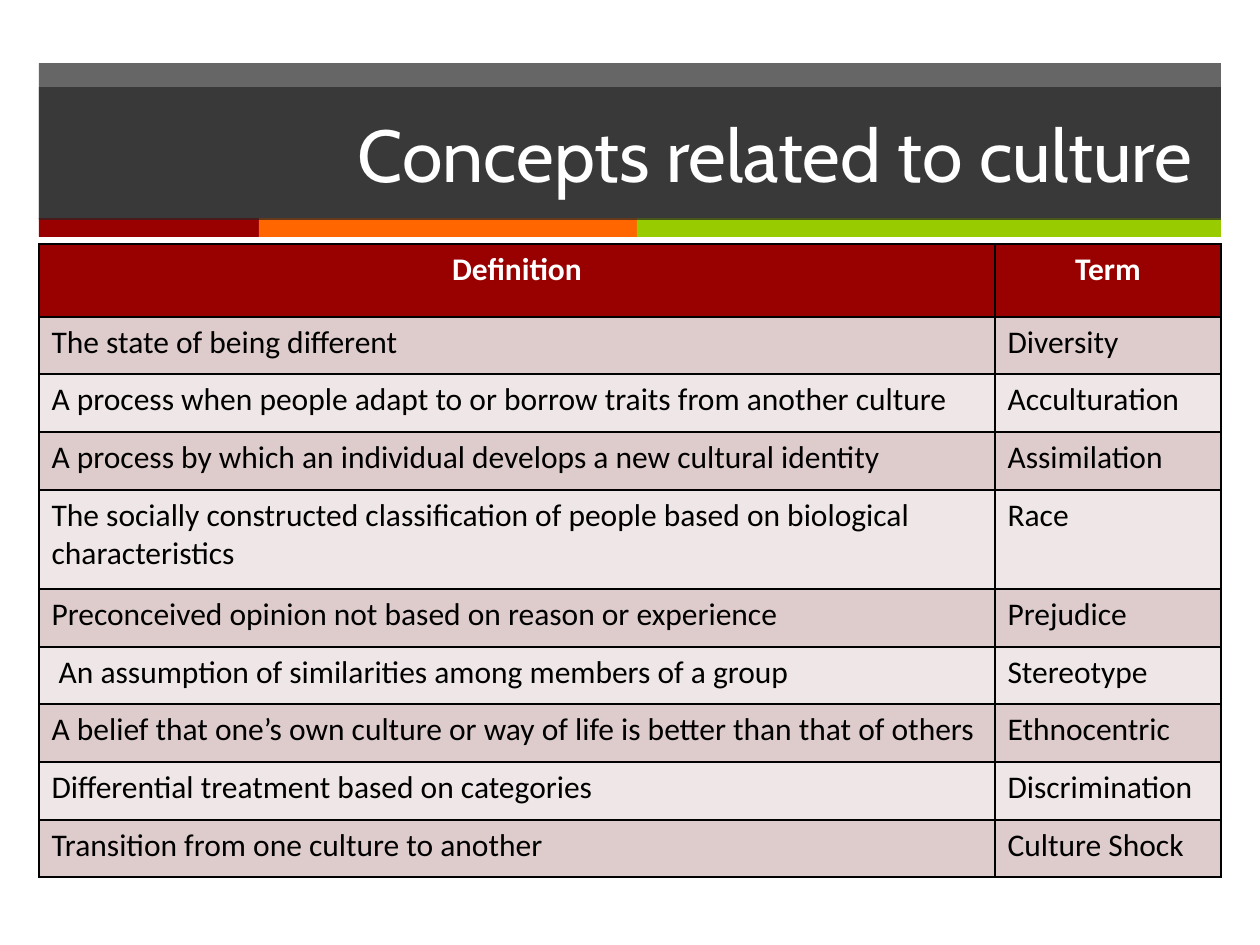
"""Build the slide of concepts related to culture, with their definitions."""
from lxml import etree
from pptx import Presentation
from pptx.dml.color import RGBColor
from pptx.enum.shapes import MSO_SHAPE
from pptx.enum.text import MSO_ANCHOR, PP_ALIGN
from pptx.oxml.ns import qn
from pptx.util import Pt

RECTANGLE = MSO_SHAPE.RECTANGLE
MIDDLE = MSO_ANCHOR.MIDDLE
LEFT, CENTER, RIGHT = PP_ALIGN.LEFT, PP_ALIGN.CENTER, PP_ALIGN.RIGHT

WHITE = RGBColor(0xFF, 0xFF, 0xFF)
BLACK = RGBColor(0x00, 0x00, 0x00)
CHARCOAL = RGBColor(0x26, 0x26, 0x26)
DARK_RED = RGBColor(0x99, 0x00, 0x00)
ORANGE = RGBColor(0xFF, 0x66, 0x00)
LIME = RGBColor(0x99, 0xCC, 0x00)
ROSE = RGBColor(0xDE, 0xCC, 0xCC)
PALE_ROSE = RGBColor(0xEF, 0xE7, 0xE7)

HEADING = "Concepts related to culture "
CONCEPTS = [
    ("Definition", "Term"),
    ("The state of being different", "Diversity"),
    ("A process when people adapt to or borrow traits from another culture", "Acculturation"),
    ("A process by which an individual develops a new cultural identity", "Assimilation"),
    ("The socially constructed classification of people based on biological characteristics", "Race"),
    ("Preconceived opinion not based on reason or experience", "Prejudice"),
    (" An assumption of similarities among members of a group", "Stereotype"),
    ("A belief that one’s own culture or way of life is better than that of others", "Ethnocentric"),
    ("Differential treatment based on categories", "Discrimination"),
    ("Transition from one culture to another", "Culture Shock"),
]
STRIPES = [(DARK_RED, 220), (ORANGE, 378), (LIME, 584)]
COLUMN_WIDTHS = [956, 226]
ROW_HEIGHTS = [73, 57, 58, 58, 99, 58, 57, 58, 58, 57]

EMU_PER_PX = 914400 // 126
MARGIN = 39
CONTENT_WIDTH = sum(COLUMN_WIDTHS)
BAND_TOP, BAND_HEIGHT = 63, 156
TITLE_TOP, TITLE_HEIGHT = 87, 133
STRIPE_TOP, STRIPE_HEIGHT = 218, 19
TABLE_TOP = 244


def px(*lengths):
    return [length * EMU_PER_PX for length in lengths]


def paint(shape, color, opacity=100):
    shape.fill.solid()
    shape.fill.fore_color.rgb = color
    if opacity < 100:
        tint = shape.fill._xPr.find(".//" + qn("a:srgbClr"))
        etree.SubElement(tint, qn("a:alpha"), val=str(opacity * 1000))


def add_bar(slide, left, top, width, height, color, opacity=100):
    bar = slide.shapes.add_shape(RECTANGLE, *px(left, top, width, height))
    bar.shadow.inherit = False
    bar.line.fill.background()
    paint(bar, color, opacity)


def style_text(paragraph, font_name, size, color, alignment, bold=False):
    paragraph.alignment = alignment
    font = paragraph.font
    font.name, font.size, font.bold = font_name, Pt(size), bold
    font.color.rgb = color


def add_borders(cell):
    properties = cell._tc.get_or_add_tcPr()
    for position, side in enumerate(("lnL", "lnR", "lnT", "lnB")):
        border = etree.Element(qn("a:" + side), w=str(Pt(1)))
        fill = etree.SubElement(border, qn("a:solidFill"))
        etree.SubElement(fill, qn("a:srgbClr"), val=str(BLACK))
        properties.insert(position, border)


def add_header(slide):
    add_bar(slide, MARGIN, BAND_TOP, CONTENT_WIDTH, BAND_HEIGHT, CHARCOAL, 70)
    left = MARGIN
    for color, width in STRIPES:
        add_bar(slide, left, STRIPE_TOP, width, STRIPE_HEIGHT, color)
        left += width

    title = slide.shapes.title
    slide.shapes._spTree.append(title._element)
    title.left, title.top, title.width, title.height = px(
        MARGIN, TITLE_TOP, CONTENT_WIDTH, TITLE_HEIGHT)
    paint(title, CHARCOAL, 70)
    title.text_frame.text = HEADING
    title.text_frame.vertical_anchor = MIDDLE
    style_text(title.text_frame.paragraphs[0], "Cabin", 42, WHITE, RIGHT)


def add_concept_table(slide):
    table = slide.shapes.add_table(
        len(CONCEPTS), len(COLUMN_WIDTHS),
        *px(MARGIN, TABLE_TOP, CONTENT_WIDTH, sum(ROW_HEIGHTS))).table
    for column, width in zip(table.columns, px(*COLUMN_WIDTHS)):
        column.width = width
    for row, height in zip(table.rows, px(*ROW_HEIGHTS)):
        row.height = height
    for r, concept in enumerate(CONCEPTS):
        is_header = r == 0
        background = DARK_RED if is_header else (PALE_ROSE, ROSE)[r % 2]
        for c, wording in enumerate(concept):
            cell = table.cell(r, c)
            cell.text = wording
            paint(cell, background)
            add_borders(cell)
            style_text(cell.text_frame.paragraphs[0], "Calibri", 18,
                       WHITE if is_header else BLACK,
                       CENTER if is_header else LEFT, is_header)


def main():
    presentation = Presentation()
    presentation.slide_width, presentation.slide_height = px(1260, 945)
    slide = presentation.slides.add_slide(presentation.slide_layouts[5])
    add_header(slide)
    add_concept_table(slide)
    presentation.save("out.pptx")


if __name__ == "__main__":
    main()
